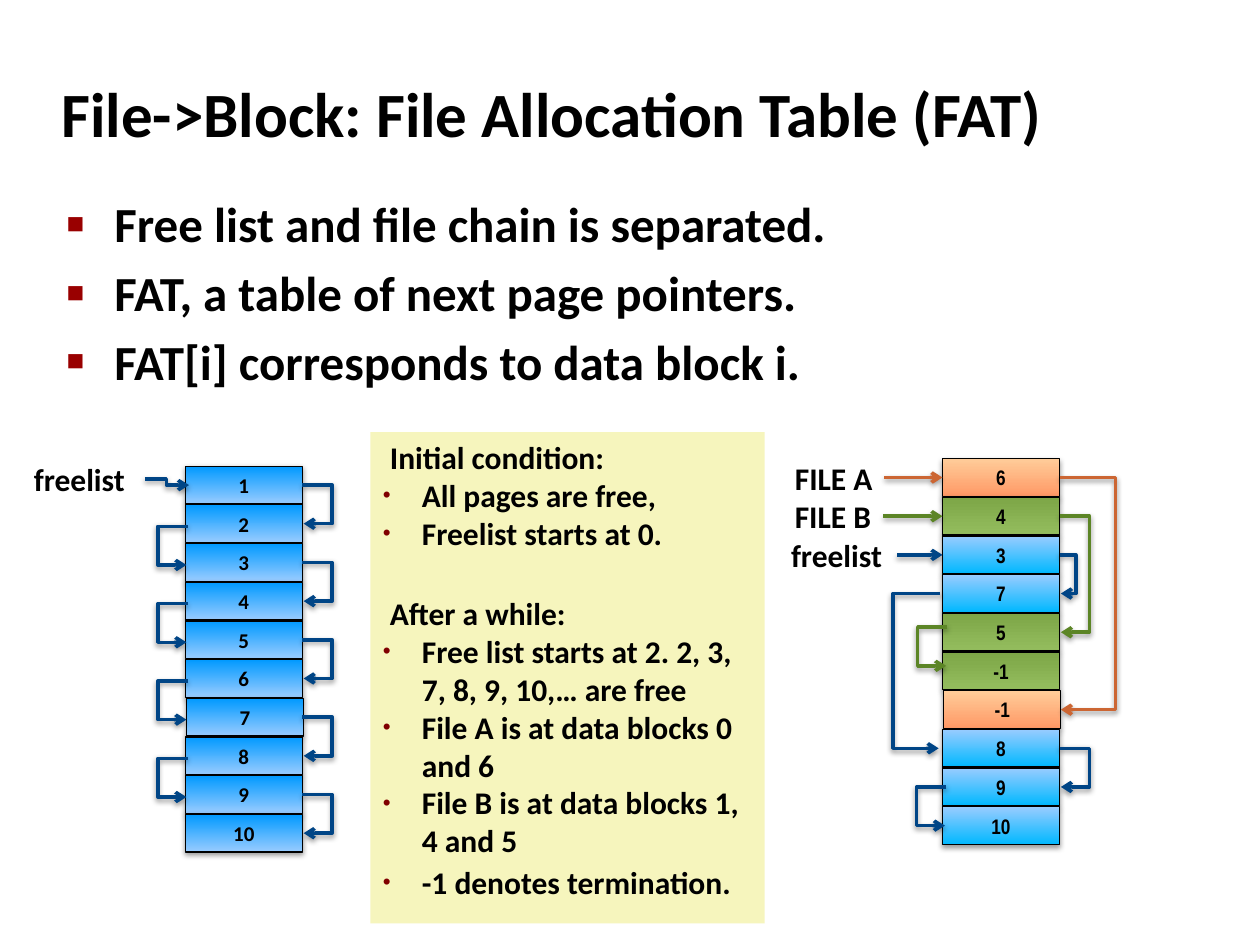
from lxml.etree import SubElement as Sub
from pptx import Presentation
from pptx.dml.color import RGBColor as Rgb
from pptx.enum.shapes import MSO_CONNECTOR as Link, MSO_SHAPE as Kind
from pptx.enum.text import MSO_ANCHOR as Anchor, PP_ALIGN as Align
from pptx.oxml.ns import qn
from pptx.util import Inches, Pt

PITCH, CELL_W, CELL_H = 0.307, 0.93, 0.3
NAVY, RUST, MOSS = "004586", "CC6633", "5C8526"
AZURE = ("0099FF", "99CCFF")
SKY = ("99CCFF", "00B8FF")
PEACH = ("FFCC99", "FF9966")
GREEN = ("7DA647", "94BD5E")


def hue(code):
    """Turn a hex string into a colour."""
    return Rgb.from_string(code)


def shade(item):
    """Give a shape or connector a soft drop shadow."""
    box = Sub(item._element.spPr, qn("a:effectLst"))
    drop = Sub(box, qn("a:outerShdw"), blurRad=str(Pt(3.1)), dist=str(Pt(1.6)),
               dir="5400000", rotWithShape="0")
    tint = Sub(drop, qn("a:srgbClr"), val="000000")
    Sub(tint, qn("a:alpha"), val="38000")


def write(para, text, size, font="Calibri"):
    """Add one bold black run."""
    run = para.add_run()
    run.text = text
    run.font.size, run.font.name, run.font.bold = Pt(size), font, True
    run.font.color.rgb = hue("000000")


def bullet(para, mark, code, scale, indent):
    """Set a coloured bullet with a hanging indent."""
    props = para._p.get_or_add_pPr()
    props.set("marL", str(Inches(indent)))
    props.set("indent", str(-Inches(indent)))
    Sub(Sub(props, qn("a:buClr")), qn("a:srgbClr"), val=code)
    Sub(props, qn("a:buSzPct"), val=str(scale * 1000))
    Sub(props, qn("a:buFont"), typeface="Arial")
    Sub(props, qn("a:buChar"), char=mark)


def label(slide, x, y, w, h, text, size=18):
    """Place a one-line text box."""
    frame = slide.shapes.add_textbox(Inches(x), Inches(y), Inches(w), Inches(h)).text_frame
    frame.word_wrap = True
    frame.margin_right = 0
    frame.vertical_anchor = Anchor.MIDDLE
    write(frame.paragraphs[0], text, size)


def arrow(slide, x1, y1, x2, y2, code, bend=None):
    """Draw an arrow, turning at the x position bend if there is one."""
    kind = Link.STRAIGHT if bend is None else Link.ELBOW
    line = slide.shapes.add_connector(kind, Inches(x1), Inches(y1), Inches(x2), Inches(y2))
    line.line.color.rgb = hue(code)
    line.line.width = Pt(2)
    Sub(line.line._get_or_add_ln(), qn("a:tailEnd"), type="arrow")
    if bend is not None:
        turn = round((bend - x1) / (x2 - x1) * 100000)
        guides = line._element.spPr.find(qn("a:prstGeom")).get_or_add_avLst()
        Sub(guides, qn("a:gd"), name="adj1", fmla=f"val {turn}")
    shade(line)


def middle(y, row):
    """Return the height of the centre of a row."""
    return y + row * PITCH + CELL_H / 2


def hook(slide, x, y, start, end, reach, code):
    """Link two rows round the right side, or the left if reach is negative."""
    step = 0.01 if reach > 0 else -0.01
    arrow(slide, x, middle(y, start), x + step, middle(y, end), code, x + reach)


def stack(slide, x, y, cells, font):
    """Stack the cells of one table from top to bottom."""
    for row, (text, tones) in enumerate(cells):
        left = x + (0.01 if row == 6 else 0)
        cell = slide.shapes.add_shape(Kind.RECTANGLE, Inches(left), Inches(y + row * PITCH),
                                      Inches(CELL_W), Inches(CELL_H))
        cell.fill.gradient()
        cell.fill.gradient_angle = 270
        for stop, code in zip(cell.fill.gradient_stops, tones):
            stop.color.rgb = hue(code)
        cell.line.color.rgb = hue("000000")
        cell.line.width = Pt(0.75)
        shade(cell)
        cell.text_frame.vertical_anchor = Anchor.MIDDLE
        para = cell.text_frame.paragraphs[0]
        para.alignment = Align.CENTER
        write(para, text, 12, font)


def points(slide, x, y, w, h):
    """Place the main bullet list."""
    frame = slide.shapes.add_textbox(Inches(x), Inches(y), Inches(w), Inches(h)).text_frame
    frame.word_wrap = True
    lines = ("Free list and file chain is separated.",
             "FAT, a table of next page pointers.",
             "FAT[i] corresponds to data block i.")
    for num, text in enumerate(lines):
        para = frame.add_paragraph() if num else frame.paragraphs[0]
        para.space_before = Pt(5.6)
        bullet(para, "■", "990000", 60, 0.38)
        write(para, text, 28)


def before(slide, x, y):
    """Draw the table in which every page is free."""
    stack(slide, x, y, [(str(n), AZURE) for n in range(1, 11)], "Calibri")
    label(slide, x - 1.3, y - 0.1, 0.98, 0.4, "freelist")
    arrow(slide, x - 0.32, y + 0.1, x + 0.03, y + 0.15, NAVY, x - 0.15)
    for row in range(0, 10, 2):
        hook(slide, x + CELL_W, y, row, row + 1, 0.24, NAVY)
    for row in range(1, 8, 2):
        hook(slide, x + 0.02, y + 0.02, row, row + 1, -0.24, NAVY)


def after(slide, x, y):
    """Draw the table with two files and the remaining free list."""
    cells = [("6", PEACH), ("4", GREEN), ("3", SKY), ("7", SKY), ("5", GREEN),
             ("-1", GREEN), ("-1", PEACH), ("8", SKY), ("9", SKY), ("10", SKY)]
    stack(slide, x, y, cells, "Arial Narrow")
    heads = [("FILE A", 1.27, 0.81, RUST), ("FILE B", 1.27, 0.8, MOSS),
             ("freelist", 1.3, 0.94, NAVY)]
    for row, (text, gap, wide, code) in enumerate(heads):
        mid = middle(y, row)
        label(slide, x - gap, mid - 0.2, wide, 0.4, text)
        arrow(slide, x - gap + wide, mid, x, mid, code)
    right = x + CELL_W
    for start, end, reach, code in ((0, 6, 0.45, RUST), (2, 3, 0.13, NAVY),
                                    (1, 4, 0.24, MOSS), (7, 8, 0.24, NAVY)):
        hook(slide, right, y, start, end, reach, code)
    for shift, lift, start, end, reach, code in ((0.04, 0.04, 4, 5, -0.24, MOSS),
                                                 (0.03, 0, 8, 9, -0.24, NAVY),
                                                 (-0.02, 0, 3, 7, -0.38, NAVY)):
        hook(slide, x + shift, y - lift, start, end, reach, code)


def notice(slide, x, y, w, h):
    """Place the yellow panel that explains both tables."""
    panel = slide.shapes.add_shape(Kind.RECTANGLE, Inches(x), Inches(y), Inches(w), Inches(h))
    panel.shadow.inherit = False
    panel.fill.solid()
    panel.fill.fore_color.rgb = hue("F6F5BD")
    panel.line.fill.background()
    frame = panel.text_frame
    frame.word_wrap = True
    frame.vertical_anchor = Anchor.TOP
    lines = [(" Initial condition:", False, 0), ("All pages are free,", True, 0),
             ("Freelist starts at 0.", True, 0), (" After a while:", False, 24.4),
             ("Free list starts at 2. 2, 3, 7, 8, 9, 10,… are free", True, 0),
             ("File A is at data blocks 0 and 6", True, 0),
             ("File B is at data blocks 1, 4 and 5", True, 0),
             ("-1 denotes termination.", True, 2.4)]
    for num, (text, dot, gap) in enumerate(lines):
        para = frame.add_paragraph() if num else frame.paragraphs[0]
        para.alignment = Align.LEFT
        para.space_before = Pt(gap)
        if dot:
            bullet(para, "•", "800000", 71, 0.31)
        write(para, text, 18)


def main():
    """Build the slide and save it."""
    deck = Presentation()
    deck.slide_width, deck.slide_height = Inches(10), Inches(7.5)
    slide = deck.slides.add_slide(deck.slide_layouts[6])
    label(slide, 0.39, 0.48, 8.3, 0.83, "File->Block: File Allocation Table (FAT)", 36)
    points(slide, 0.43, 1.49, 8.64, 5.44)
    before(slide, 1.47, 3.7)
    after(slide, 7.48, 3.64)
    notice(slide, 2.94, 3.43, 3.13, 3.9)
    deck.save("out.pptx")


if __name__ == "__main__":
    main()
